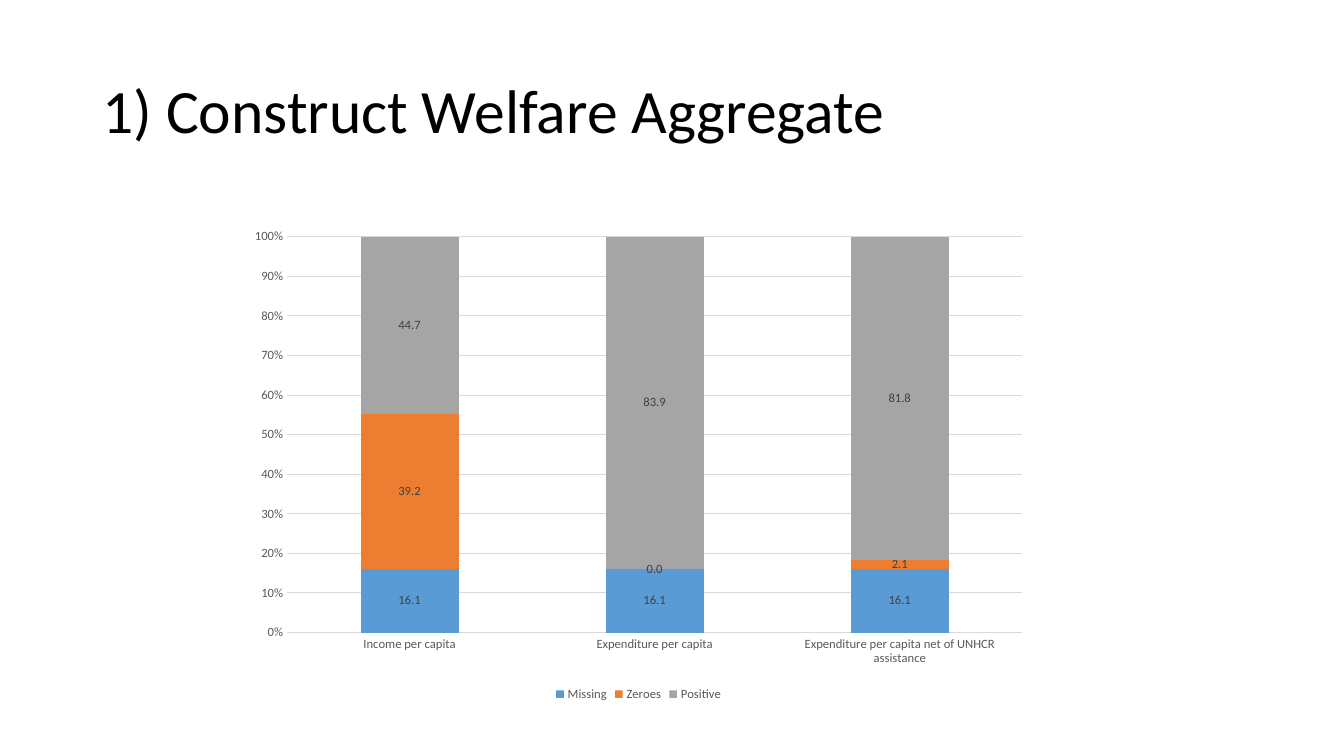
import pptx
import pptx.chart.data
import pptx.dml.color
import pptx.enum.chart
import pptx.enum.text
import pptx.util

Pt = pptx.util.Pt

TITLE = "1) Construct Welfare Aggregate"
CATEGORIES = [
    "Income per capita",
    "Expenditure per capita",
    "Expenditure per capita net of UNHCR assistance",
]
SERIES = [
    ("Missing", "blue", (16.1, 16.1, 16.1)),
    ("Zeroes", "orange", (39.2, 0, 2.1)),
    ("Positive", "gray", (44.7, 83.9, 81.8)),
]
COLORS = {
    "black": "000000",
    "label": "404040",
    "axis": "595959",
    "grid": "D9D9D9",
    "blue": "5B9BD5",
    "orange": "ED7D31",
    "gray": "A5A5A5",
}
FONT = "Calibri"
SLIDE_SIZE = (960, 540)
TITLE_BOX = (66, 28.75, 828, 104.4)
CHART_BOX = (170.64, 156.96, 570.96, 347.04)


def color(name):
    return pptx.dml.color.RGBColor.from_string(COLORS[name])


def set_font(font, size, color_name):
    font.name = FONT
    font.size = Pt(size)
    font.bold = False
    font.color.rgb = color(color_name)


def set_line(line, color_name):
    line.color.rgb = color(color_name)
    line.width = Pt(0.75)


def add_title(slide):
    shape = slide.shapes.add_textbox(*map(Pt, TITLE_BOX))
    frame = shape.text_frame
    frame.word_wrap = True
    frame.vertical_anchor = pptx.enum.text.MSO_ANCHOR.MIDDLE
    paragraph = frame.paragraphs[0]
    paragraph.text = TITLE
    paragraph.line_spacing = 0.9
    set_font(paragraph.font, 44, "black")


def add_welfare_chart(slide):
    data = pptx.chart.data.CategoryChartData(number_format="0.0")
    data.categories = CATEGORIES
    for name, _, values in SERIES:
        data.add_series(name, values)
    chart = slide.shapes.add_chart(
        pptx.enum.chart.XL_CHART_TYPE.COLUMN_STACKED_100,
        *map(Pt, CHART_BOX),
        data,
    ).chart
    set_font(chart.font, 10, "black")
    chart.has_title = False

    chart.has_legend = True
    chart.legend.position = pptx.enum.chart.XL_LEGEND_POSITION.BOTTOM
    chart.legend.include_in_layout = False
    set_font(chart.legend.font, 9, "axis")

    for axis in (chart.category_axis, chart.value_axis):
        axis.major_tick_mark = pptx.enum.chart.XL_TICK_MARK.NONE
        axis.minor_tick_mark = pptx.enum.chart.XL_TICK_MARK.NONE
        set_font(axis.tick_labels.font, 9, "axis")
    set_line(chart.category_axis.format.line, "grid")
    value_axis = chart.value_axis
    value_axis.format.line.fill.background()
    value_axis.has_major_gridlines = True
    set_line(value_axis.major_gridlines.format.line, "grid")
    value_axis.tick_labels.number_format = "0%"
    value_axis.tick_labels.number_format_is_linked = False

    plot = chart.plots[0]
    plot.vary_by_categories = False
    plot.gap_width = 150
    plot.overlap = 100
    for series, (_, fill_name, _) in zip(plot.series, SERIES):
        series.format.fill.solid()
        series.format.fill.fore_color.rgb = color(fill_name)
        labels = series.data_labels
        labels.show_value = True
        labels.number_format = "0.0"
        labels.number_format_is_linked = False
        labels.position = pptx.enum.chart.XL_LABEL_POSITION.CENTER
        set_font(labels.font, 9, "label")


def main():
    presentation = pptx.Presentation()
    presentation.slide_width, presentation.slide_height = map(Pt, SLIDE_SIZE)
    slide = presentation.slides.add_slide(presentation.slide_layouts[6])
    add_title(slide)
    add_welfare_chart(slide)
    presentation.save("out.pptx")


if __name__ == "__main__":
    main()
